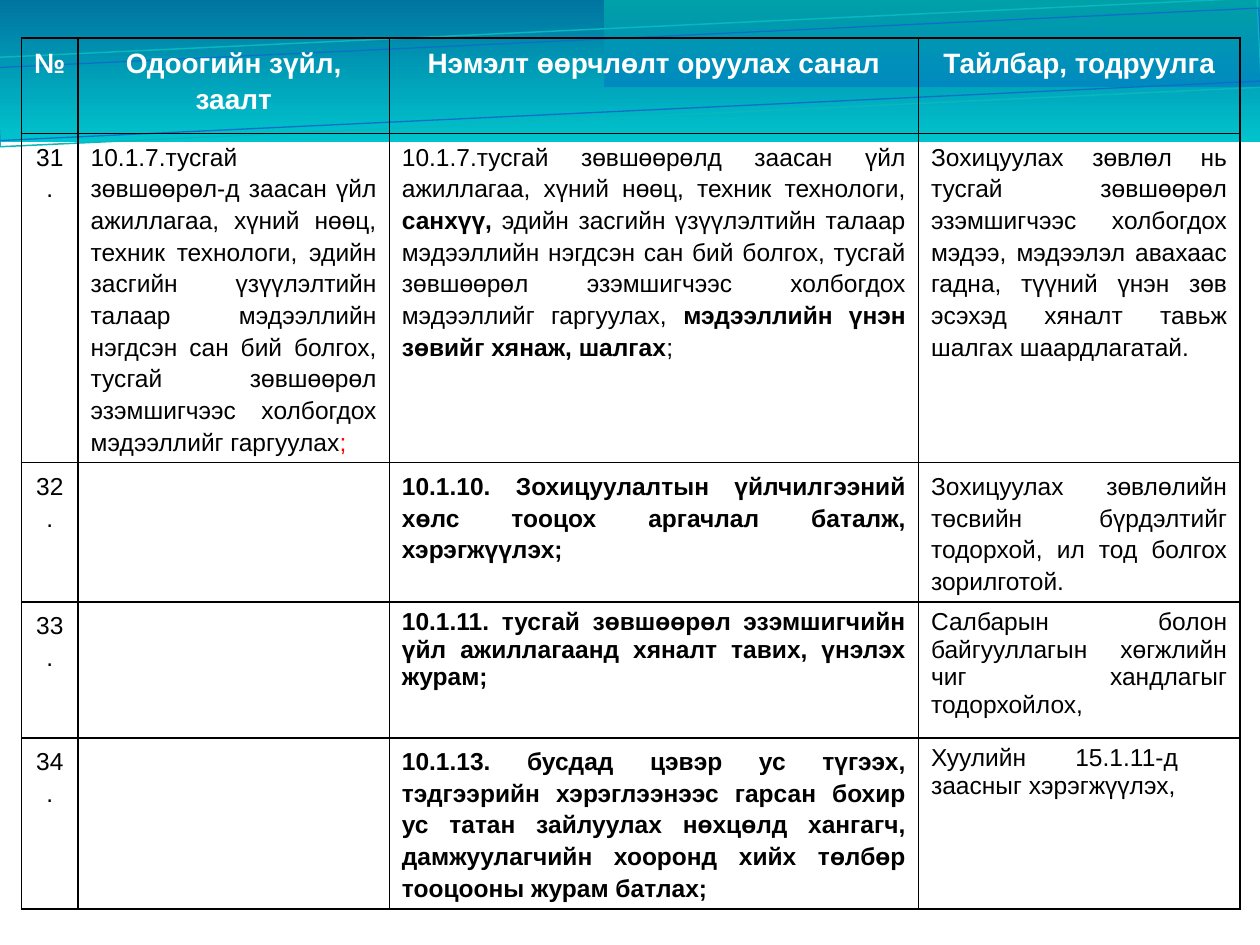
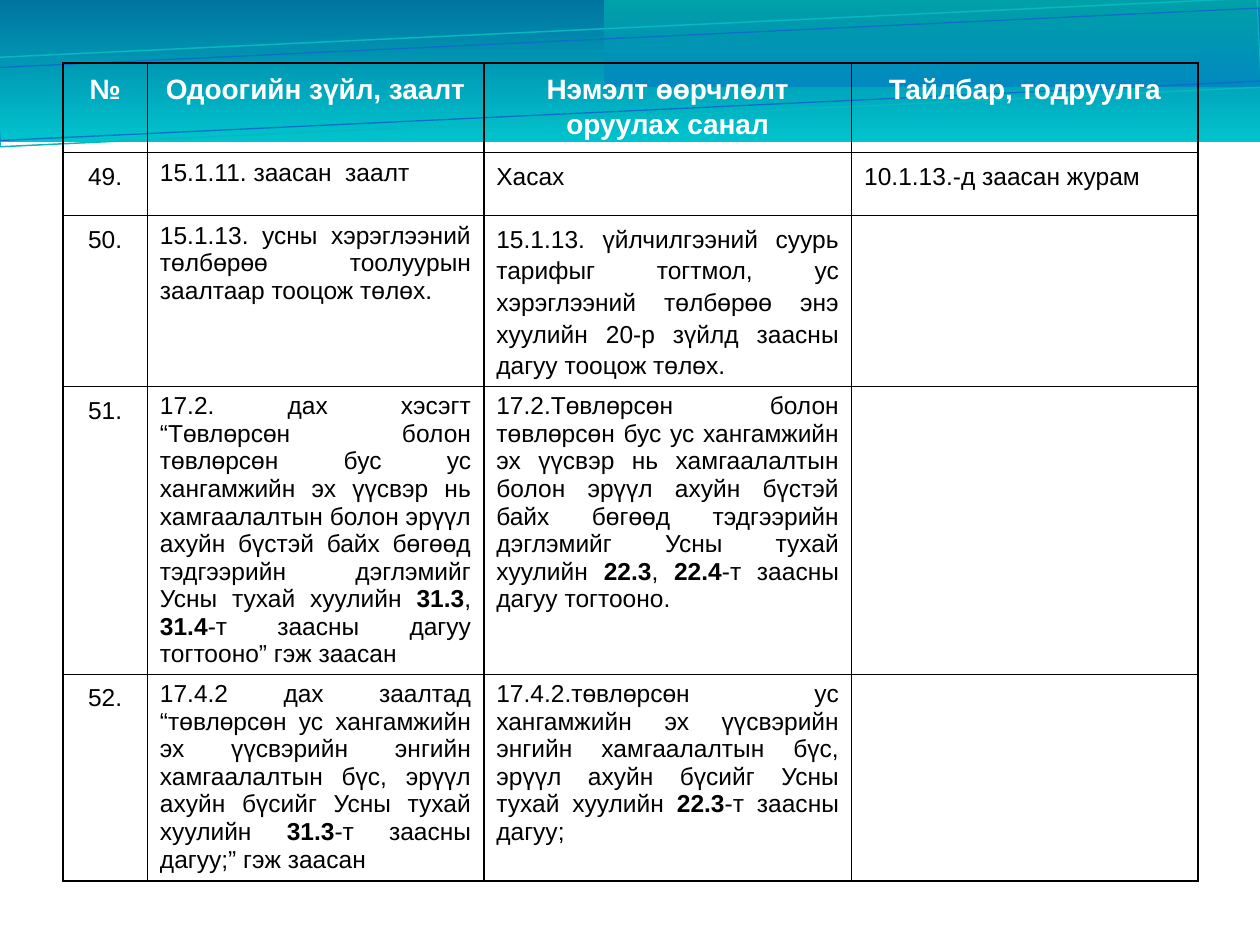
from dataclasses import dataclass

from lxml import etree
from pptx import Presentation
from pptx.dml.color import RGBColor
from pptx.enum.shapes import MSO_SHAPE
from pptx.enum.text import PP_ALIGN
from pptx.oxml.ns import qn
from pptx.slide import Slide
from pptx.table import _Cell
from pptx.util import Inches, Pt

RECTANGLE = MSO_SHAPE.RECTANGLE
LEFT, CENTER, JUSTIFY = PP_ALIGN.LEFT, PP_ALIGN.CENTER, PP_ALIGN.JUSTIFY

COLORS = {
    "band_top": "0074A0",
    "band_bottom": "00C4CD",
    "panel_bottom": "008ABF",
    "panel_top": "00A0A8",
    "teal_line": "09B7BF",
    "blue_line": "0F6FC6",
    "header": "FFFFFF",
    "text": "000000",
    "accent": "FF0000",
    "border": "000000",
}
FONT = "Arial"
HEADER_SIZE, BODY_SIZE = Pt(16), Pt(14)
BORDER_WIDTH = Pt(1)
LOOSE, SINGLE = 1.15, 1.0
HEADERS = ("№", "Одоогийн зүйл, заалт", "Нэмэлт өөрчлөлт оруулах санал", "Тайлбар, тодруулга")


@dataclass(frozen=True)
class GradientBand:
    left: float
    top: float
    width: float
    height: float
    start: str
    end: str
    angle: int


@dataclass(frozen=True)
class TiltedOutline:
    left: float
    top: float
    width: float
    height: float
    color: str
    line_width: float


@dataclass(frozen=True)
class Phrase:
    text: str
    bold: bool = False
    color: str = "text"


@dataclass(frozen=True)
class Content:
    phrases: tuple[Phrase, ...] = ()
    spacing: float = LOOSE
    align: PP_ALIGN = JUSTIFY


@dataclass(frozen=True)
class Proposal:
    number: int
    current: Content
    proposed: Content
    remark: Content


@dataclass(frozen=True)
class ProposalTable:
    left: float
    top: float
    widths: tuple[float, ...]
    heights: tuple[float, ...]
    proposals: tuple[Proposal, ...]


BANDS = (
    GradientBand(-0.01, -0.01, 10.02, 1.14, "band_top", "band_bottom", 270),
    GradientBand(4.79, -0.01, 5.21, 0.7, "panel_bottom", "panel_top", 90),
)
OUTLINES = (
    TiltedOutline(-0.02, 0.22, 10.02, 0.71, "teal_line", 0.85),
    TiltedOutline(-0.02, 0.3, 10.03, 0.58, "blue_line", 0.75),
)
OUTLINE_ROTATION = 357.3


def plain(text: str, spacing: float = LOOSE, align: PP_ALIGN = JUSTIFY) -> Content:
    return Content((Phrase(text),), spacing, align)


def strong(text: str, spacing: float = LOOSE) -> Content:
    return Content((Phrase(text, bold=True),), spacing)


def mixed(*texts: str, spacing: float = LOOSE) -> Content:
    """Alternate regular and bold phrases, starting with a regular one."""
    phrases = tuple(Phrase(text, bold=index % 2 == 1) for index, text in enumerate(texts))
    return Content(phrases, spacing)


EMPTY = Content()

TABLES = (
    ProposalTable(0.17, 0.3, (0.45, 2.47, 4.2, 2.55), (0.76, 2.61, 1.07, 1.08, 1.32), (
        Proposal(
            31,
            Content((
                Phrase("10.1.7.тусгай зөвшөөрөл-д заасан үйл ажиллагаа, хүний нөөц, техник "
                       "технологи, эдийн засгийн үзүүлэлтийн талаар мэдээллийн нэгдсэн сан бий "
                       "болгох, тусгай зөвшөөрөл эзэмшигчээс холбогдох мэдээллийг гаргуулах"),
                Phrase(";", color="accent"),
            )),
            mixed("10.1.7.тусгай зөвшөөрөлд заасан үйл ажиллагаа, хүний нөөц, техник технологи, ",
                  "санхүү, ",
                  "эдийн засгийн үзүүлэлтийн талаар мэдээллийн нэгдсэн сан бий болгох, тусгай "
                  "зөвшөөрөл эзэмшигчээс холбогдох мэдээллийг гаргуулах, ",
                  "мэдээллийн үнэн зөвийг хянаж, шалгах",
                  ";"),
            plain("Зохицуулах зөвлөл нь тусгай зөвшөөрөл эзэмшигчээс холбогдох мэдээ, мэдээлэл "
                  "авахаас гадна, түүний үнэн зөв эсэхэд хяналт тавьж шалгах шаардлагатай."),
        ),
        Proposal(
            32,
            EMPTY,
            strong("10.1.10. Зохицуулалтын үйлчилгээний хөлс тооцох аргачлал баталж, "
                   "хэрэгжүүлэх;"),
            plain("Зохицуулах зөвлөлийн төсвийн бүрдэлтийг тодорхой, ил тод болгох зорилготой."),
        ),
        Proposal(
            33,
            EMPTY,
            strong("10.1.11. тусгай зөвшөөрөл эзэмшигчийн үйл ажиллагаанд хяналт тавих, "
                   "үнэлэх журам;", SINGLE),
            plain("Салбарын болон байгууллагын хөгжлийн чиг хандлагыг тодорхойлох,", SINGLE),
        ),
        Proposal(
            34,
            EMPTY,
            strong("10.1.13. бусдад цэвэр ус түгээх, тэдгээрийн хэрэглээнээс гарсан бохир ус "
                   "татан зайлуулах нөхцөлд хангагч, дамжуулагчийн хооронд хийх төлбөр "
                   "тооцооны журам батлах;"),
            plain("Хуулийн 15.1.11-д  заасныг хэрэгжүүлэх,", SINGLE),
        ),
    )),
    ProposalTable(0.5, 0.5, (0.67, 2.67, 2.92, 2.75), (0.71, 0.5, 1.31, 2.11, 1.64), (
        Proposal(
            49,
            plain("15.1.11. заасан  заалт", SINGLE),
            plain("Хасах", align=LEFT),
            plain("10.1.13.-д заасан журам"),
        ),
        Proposal(
            50,
            plain("15.1.13. усны хэрэглээний төлбөрөө тоолуурын заалтаар тооцож төлөх.", SINGLE),
            plain("15.1.13. үйлчилгээний суурь тарифыг тогтмол, ус хэрэглээний төлбөрөө энэ "
                  "хуулийн 20-р зүйлд заасны дагуу тооцож төлөх."),
            EMPTY,
        ),
        Proposal(
            51,
            mixed("17.2. дах хэсэгт “Төвлөрсөн болон төвлөрсөн бус ус хангамжийн эх үүсвэр нь "
                  "хамгаалалтын болон эрүүл ахуйн бүстэй байх бөгөөд тэдгээрийн дэглэмийг Усны "
                  "тухай хуулийн ",
                  "31.3", ", ", "31.4", "-т заасны дагуу тогтооно” гэж заасан", spacing=SINGLE),
            mixed("17.2.Төвлөрсөн болон төвлөрсөн бус ус хангамжийн эх үүсвэр нь хамгаалалтын "
                  "болон эрүүл ахуйн бүстэй байх бөгөөд тэдгээрийн дэглэмийг Усны тухай хуулийн ",
                  "22.3", ", ", "22.4", "-т заасны дагуу тогтооно.", spacing=SINGLE),
            EMPTY,
        ),
        Proposal(
            52,
            mixed("17.4.2 дах заалтад “төвлөрсөн ус хангамжийн эх үүсвэрийн энгийн "
                  "хамгаалалтын бүс, эрүүл ахуйн бүсийг Усны тухай хуулийн ",
                  "31.3", "-т заасны дагуу;” гэж заасан", spacing=SINGLE),
            mixed("17.4.2.төвлөрсөн ус хангамжийн эх үүсвэрийн энгийн хамгаалалтын бүс, эрүүл "
                  "ахуйн бүсийг Усны тухай хуулийн ",
                  "22.3", "-т заасны дагуу;", spacing=SINGLE),
            EMPTY,
        ),
    )),
)


def rgb(name: str) -> RGBColor:
    return RGBColor.from_string(COLORS[name])


def add_rectangle(slide: Slide, box: GradientBand | TiltedOutline):
    shape = slide.shapes.add_shape(
        RECTANGLE, Inches(box.left), Inches(box.top), Inches(box.width), Inches(box.height)
    )
    shape.shadow.inherit = False
    return shape


def add_backdrop(slide: Slide) -> None:
    for band in BANDS:
        shape = add_rectangle(slide, band)
        shape.line.fill.background()
        shape.fill.gradient()
        shape.fill.gradient_angle = band.angle
        for stop, color, position in zip(
            shape.fill.gradient_stops, (band.start, band.end), (0, 1)
        ):
            stop.color.rgb = rgb(color)
            stop.position = position
    for outline in OUTLINES:
        shape = add_rectangle(slide, outline)
        shape.rotation = OUTLINE_ROTATION
        shape.fill.background()
        shape.line.color.rgb = rgb(outline.color)
        shape.line.width = Pt(outline.line_width)


def add_borders(cell: _Cell) -> None:
    properties = cell._tc.get_or_add_tcPr()
    for side in ("a:lnL", "a:lnR", "a:lnT", "a:lnB"):
        line = etree.SubElement(properties, qn(side), w=str(BORDER_WIDTH))
        fill = etree.SubElement(line, qn("a:solidFill"))
        etree.SubElement(fill, qn("a:srgbClr"), val=COLORS["border"])


def fill_cell(cell: _Cell, content: Content, size: Pt) -> None:
    add_borders(cell)
    cell.fill.background()
    paragraph = cell.text_frame.paragraphs[0]
    paragraph.alignment = content.align
    paragraph.line_spacing = content.spacing
    paragraph.font.name = FONT
    paragraph.font.size = size
    uniform = len({(phrase.bold, phrase.color) for phrase in content.phrases}) == 1
    for phrase in content.phrases:
        run = paragraph.add_run()
        run.text = phrase.text
        font = paragraph.font if uniform else run.font
        font.bold = phrase.bold
        font.color.rgb = rgb(phrase.color)


def add_proposal_table(slide: Slide, design: ProposalTable) -> None:
    table = slide.shapes.add_table(
        len(design.heights), len(design.widths), Inches(design.left), Inches(design.top),
        Inches(sum(design.widths)), Inches(sum(design.heights)),
    ).table
    table.first_row = False
    table.horz_banding = False
    for column, width in zip(table.columns, design.widths):
        column.width = Inches(width)
    for row, height in zip(table.rows, design.heights):
        row.height = Inches(height)

    for column, title in enumerate(HEADERS):
        header = Content((Phrase(title, bold=True, color="header"),), align=CENTER)
        fill_cell(table.cell(0, column), header, HEADER_SIZE)
    for row, proposal in enumerate(design.proposals, start=1):
        number = plain(f"{proposal.number}.", align=CENTER)
        contents = (number, proposal.current, proposal.proposed, proposal.remark)
        for column, content in enumerate(contents):
            fill_cell(table.cell(row, column), content, BODY_SIZE)


def main() -> None:
    presentation = Presentation()
    presentation.slide_width = Inches(10)
    presentation.slide_height = Inches(7.5)
    blank_layout = presentation.slide_layouts[6]
    for proposal_table in TABLES:
        slide = presentation.slides.add_slide(blank_layout)
        add_backdrop(slide)
        add_proposal_table(slide, proposal_table)
    presentation.save("out.pptx")


if __name__ == "__main__":
    main()
